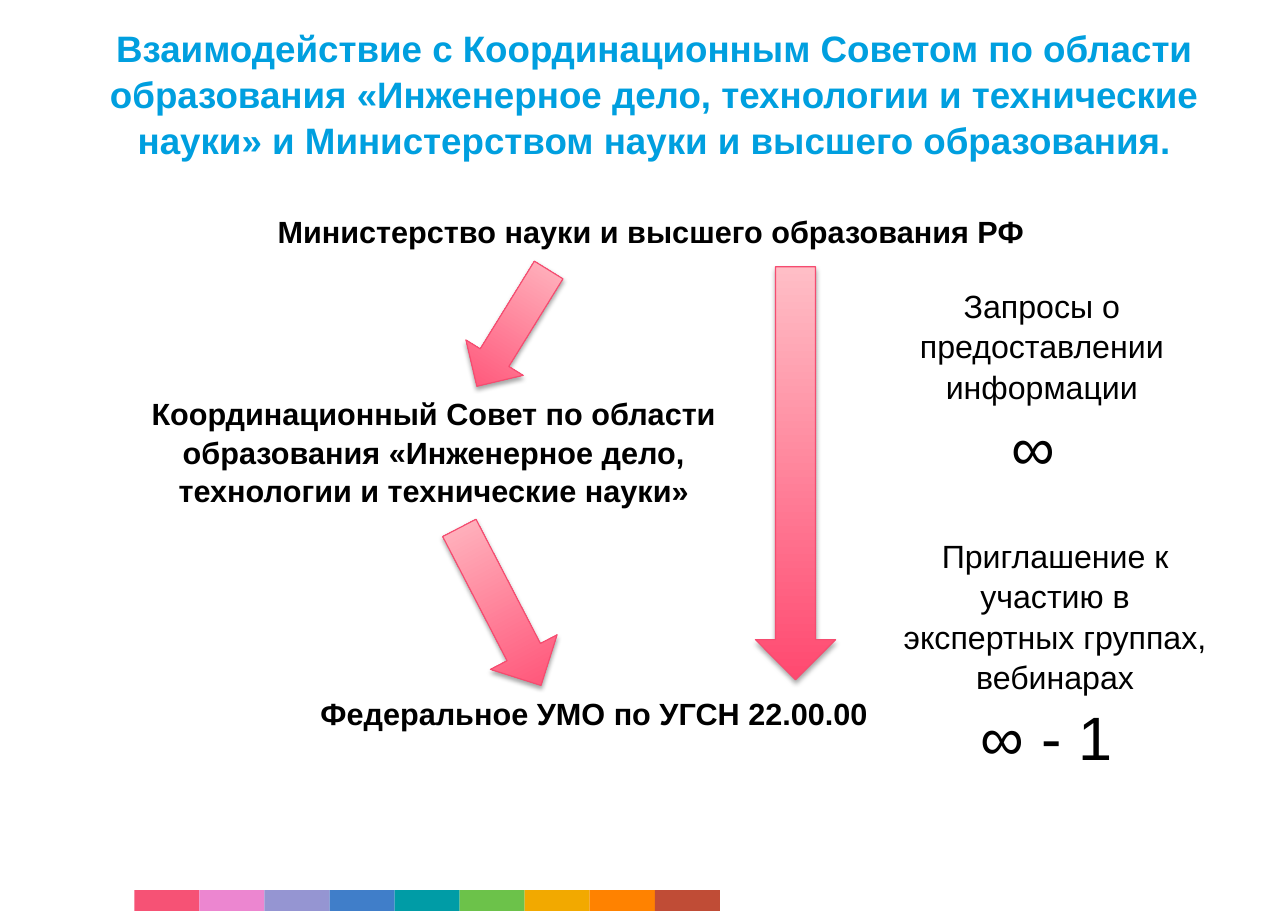
import pptx
import pptx.dml.color
import pptx.enum.shapes
import pptx.enum.text
import pptx.oxml
import pptx.oxml.ns
import pptx.util

Cm, Pt = pptx.util.Cm, pptx.util.Pt
ALIGN = pptx.enum.text.PP_ALIGN
SHAPE = pptx.enum.shapes.MSO_SHAPE

# Content; boxes are left, top, width, height in cm
TITLE = ("Взаимодействие с Координационным Советом по области образования "
         "«Инженерное дело, технологии и технические науки» "
         "и Министерством науки и высшего образования.")
TITLE_BOX = (2.18, 0.41, 25.81, 3.33)

# box, text, wrap
BODIES = [
    ((6.15, 4.75, 17.86, 1.12), "Министерство науки и высшего образования РФ", False),
    ((2.18, 8.94, 15.65, 2.82), "Координационный Совет по области образования "
     "«Инженерное дело, технологии и технические науки»", True),
    ((7.14, 15.85, 13.23, 1.12), "Федеральное УМО по УГСН 22.00.00", False),
]
# box, text, count
REQUESTS = [
    ((19.53, 6.43, 8.99, 4.65), "Запросы о предоставлении информации", "∞ "),
    ((20.37, 12.19, 7.92, 5.56),
     "Приглашение к участию в экспертных группах, вебинарах", "∞ - 1 "),
]
# box, rotation
ARROWS = [
    ((11.05, 5.99, 1.55, 3.15), 31.7),
    ((17.42, 6.15, 1.85, 9.52), 0),
    ((10.67, 11.94, 1.73, 4.09), 332.6),
]
STRIPE = ["F65275", "EC86D0", "9595D2", "407EC9", "009CA6",
          "6CC24A", "F2A900", "FF8200", "C04C36"]
STRIPE_LEFT, STRIPE_TOP, STRIPE_W, STRIPE_H = 3.1, 20.52, 1.5, 0.5

SHADOW = (f'<a:outerShdw {pptx.oxml.ns.nsdecls("a")} blurRad="39400" dist="22900" '
          'dir="5400000" rotWithShape="0"><a:srgbClr val="000000">'
          '<a:alpha val="35000"/></a:srgbClr></a:outerShdw>')


def color(value):
    return pptx.dml.color.RGBColor.from_string(value)


def lengths(box):
    return [Cm(v) for v in box]


def write(tf, lines, align, wrap=True):
    """Fill a frame with (text, size, bold, colour) paragraphs."""
    tf.word_wrap = wrap
    tf.auto_size = pptx.enum.text.MSO_AUTO_SIZE.NONE
    tf.vertical_anchor = pptx.enum.text.MSO_ANCHOR.TOP
    tf.text = "\n".join(line[0] for line in lines)
    for p, (_, size, bold, rgb) in zip(tf.paragraphs, lines):
        p.alignment = align
        p.line_spacing = 1.05
        font = p.runs[0].font
        font.name, font.size, font.bold = "Arial", Pt(size), bold
        font.color.rgb = color(rgb)


def add_text(slide, box, lines, align, wrap=True):
    sp = slide.shapes.add_textbox(*lengths(box))
    write(sp.text_frame, lines, align, wrap)


def add_arrow(slide, box, rotation):
    sp = slide.shapes.add_shape(SHAPE.DOWN_ARROW, *lengths(box))
    sp.rotation = rotation
    sp.fill.gradient()
    sp.fill.gradient_angle = 90
    for stop, rgb, position in zip(sp.fill.gradient_stops, ("FF4970", "FFBEC6"), (0, 1)):
        stop.color.rgb = color(rgb)
        stop.position = position
    sp.line.color.rgb = color("F54C70")
    sp.line.width = Pt(0.75)
    sp.shadow.inherit = False
    effects = sp.element.spPr.find(pptx.oxml.ns.qn("a:effectLst"))
    effects.append(pptx.oxml.parse_xml(SHADOW))


def main():
    prs = pptx.Presentation()
    prs.slide_width, prs.slide_height = Cm(29.7), Cm(21)
    slide = prs.slides.add_slide(prs.slide_layouts.get_by_name("Title Only"))

    # Colour stripe at the bottom
    for i, rgb in enumerate(STRIPE):
        box = (STRIPE_LEFT + i * STRIPE_W, STRIPE_TOP, STRIPE_W, STRIPE_H)
        sp = slide.shapes.add_shape(SHAPE.RECTANGLE, *lengths(box))
        sp.fill.solid()
        sp.fill.fore_color.rgb = color(rgb)
        sp.line.fill.background()
        sp.shadow.inherit = False

    # Title
    title = slide.shapes.title
    title.left, title.top, title.width, title.height = lengths(TITLE_BOX)
    write(title.text_frame, [(TITLE, 24, True, "009FDF")], ALIGN.CENTER)

    # Organisations and the arrows between them
    for box, text, wrap in BODIES:
        align = ALIGN.CENTER if wrap else ALIGN.LEFT
        add_text(slide, box, [(text, 20, True, "000000")], align, wrap)
    for box, rotation in ARROWS:
        add_arrow(slide, box, rotation)

    # Kinds of request with their counts
    for box, text, count in REQUESTS:
        lines = [(text, 21, False, "000000"), (count, 40, False, "000000")]
        add_text(slide, box, lines, ALIGN.CENTER)

    prs.save("out.pptx")


if __name__ == "__main__":
    main()
